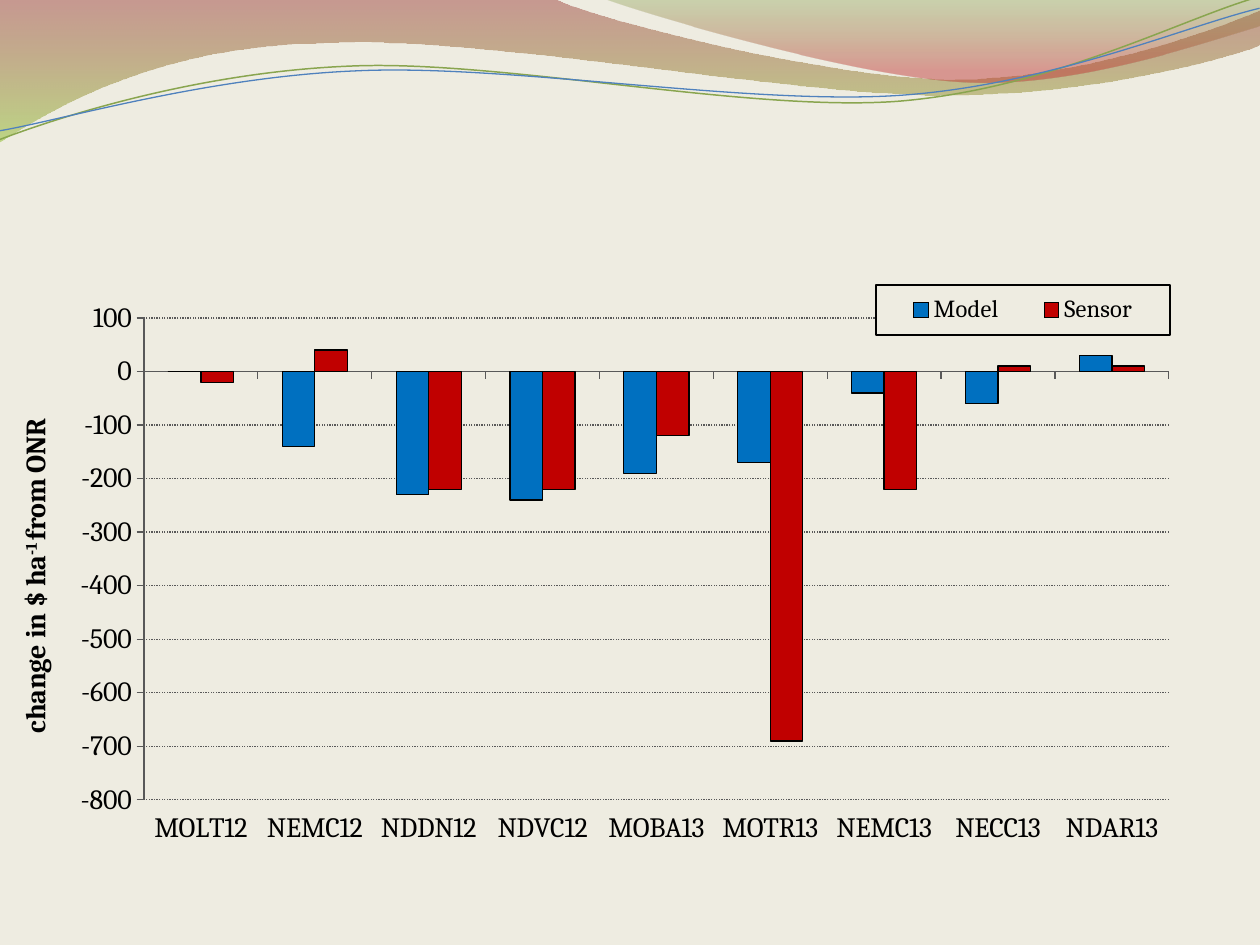
from lxml import etree
from pptx import Presentation
from pptx import util as u
from pptx.chart.data import CategoryChartData
from pptx.dml.color import RGBColor
from pptx.enum import chart as charts, dml
from pptx.oxml import parse_xml
from pptx.oxml.ns import nsdecls, qn

PX = 914400 / 126
FONT = "Cambria"
BLACK = RGBColor(0x00, 0x00, 0x00)
GREY = RGBColor(0x59, 0x59, 0x59)
CREAM = RGBColor(0xEE, 0xEC, 0xE1)
MAROON = RGBColor(0x97, 0x33, 0x30)
LIME = RGBColor(0x95, 0xC2, 0x38)
OLIVE = RGBColor(0x76, 0x95, 0x35)
RED = RGBColor(0xBE, 0x33, 0x30)
GREEN_LINE = RGBColor(0x89, 0xA5, 0x4F)
BLUE_LINE = RGBColor(0x4F, 0x81, 0xBD)
MODEL_BLUE = RGBColor(0x00, 0x70, 0xC0)
SENSOR_RED = RGBColor(0xC0, 0x00, 0x00)

# Each path is a start point, then lines (x, y) and curves (x1, y1, x2, y2, x, y).
WIDE_BAND = [(0, 0), (554, -1), (600, 21, 837, 79, 955, 79),
             (1075, 79, 1207, 33, 1260, 11), (1261, 45),
             (1239, 55, 1096, 96, 940, 95), (784, 95, 481, 35, 324, 43),
             (163, 45, 58, 105, -1, 142)]
RIGHT_BAND = [(604, -1), (643, 14, 859, 78, 969, 82),
              (1079, 87, 1211, 40, 1260, 26), (1260, 0)]
GREEN_WAVE = [(-3, 110), (58, 90, 199, 52, 350, 53),
              (499, 53, 745, 118, 896, 114), (1049, 109, 1184, 45, 1260, 27)]
BLUE_WAVE = [(-2, 101), (57, 94, 207, 57, 357, 58),
             (509, 58, 750, 112, 902, 108), (1052, 104, 1188, 52, 1262, 38)]
WAVE_TILT = -2.7

CHART_BOX = (10, 267, 1187, 605)
SITES = ["MOLT12", "NEMC12", "NDDN12", "NDVC12", "MOBA13",
         "MOTR13", "NEMC13", "NECC13", "NDAR13"]
SERIES = [
    ("Model", MODEL_BLUE, [0, -140, -230, -240, -190, -170, -40, -60, 30]),
    ("Sensor", SENSOR_RED, [-20, 40, -220, -220, -120, -690, -220, 10, 10]),
]


def px(length):
    return u.Emu(round(length * PX))


def place(element, index, left, top, width=None, height=None, inner=False):
    """Give a chart part a manual layout, in px from the corner of the chart."""
    for old in element.findall(qn("c:layout")):
        element.remove(old)
    settings = {"layoutTarget": "inner"} if inner else {}
    settings.update(xMode="edge", yMode="edge",
                    x=left / CHART_BOX[2], y=top / CHART_BOX[3])
    if width:
        settings.update(w=width / CHART_BOX[2], h=height / CHART_BOX[3])
    layout = parse_xml(f"<c:layout {nsdecls('c')}><c:manualLayout/></c:layout>")
    for tag, value in settings.items():
        etree.SubElement(layout[0], qn(f"c:{tag}")).set("val", str(value))
    element.insert(index, layout)


class Deck:
    def __init__(self, width, height):
        self.presentation = Presentation()
        self.presentation.slide_width = px(width)
        self.presentation.slide_height = px(height)
        self.slide = None

    def add_slide(self, color):
        self.slide = self.presentation.slides.add_slide(self.presentation.slide_layouts[6])
        self.slide.background.fill.solid()
        self.slide.background.fill.fore_color.rgb = color

    def outline(self, path, close):
        """Build a freeform, merging each curve's three points into one Bezier."""
        points = [(px(part[i]), px(part[i + 1]))
                  for part in path for i in range(0, len(part), 2)]
        builder = self.slide.shapes.build_freeform(*points[0])
        builder.add_line_segments(points[1:], close=close)
        shape = builder.convert_to_shape()
        shape.shadow.inherit = False
        segments = iter(list(shape._element.spPr.iter(qn("a:lnTo"))))
        for part in path[1:]:
            group = [next(segments) for _ in range(len(part) // 2)]
            if len(group) == 3:
                curve = etree.Element(qn("a:cubicBezTo"))
                group[0].addprevious(curve)
                for segment in group:
                    curve.append(segment[0])
                    segment.getparent().remove(segment)
        return shape

    def band(self, path, stops):
        """Draw a closed shape with a downward gradient of (position, colour, opacity %)."""
        shape = self.outline(path, True)
        shape.line.fill.background()
        shape.fill.gradient()
        shape.fill.gradient_angle = 270
        for stop, (position, color, _) in zip(shape.fill.gradient_stops, stops):
            stop.position = position
            stop.color.rgb = color
        colors = shape._element.spPr.iter(qn("a:srgbClr"))
        for element, (_, _, opacity) in zip(colors, stops):
            etree.SubElement(element, qn("a:alpha")).set("val", str(opacity * 1000))

    def wave(self, path, color, width):
        shape = self.outline(path, False)
        shape.rotation = WAVE_TILT
        shape.fill.background()
        shape.line.color.rgb = color
        shape.line.width = u.Pt(width)

    def font(self, font, size, bold=False):
        font.name = FONT
        font.size = u.Pt(size)
        font.bold = bold
        font.color.rgb = BLACK

    def column_chart(self, box, categories, series):
        data = CategoryChartData()
        data.categories = categories
        for name, _, values in series:
            data.add_series(name, values)
        chart = self.slide.shapes.add_chart(
            charts.XL_CHART_TYPE.COLUMN_CLUSTERED, *map(px, box), data).chart
        chart.has_title = False
        self.font(chart.font, 10)
        plot = chart.plots[0]
        plot.gap_width, plot.overlap, plot.vary_by_categories = 150, 0, False
        for bars, (_, color, _) in zip(plot.series, series):
            bars.invert_if_negative = False
            bars.format.fill.solid()
            bars.format.fill.fore_color.rgb = color
            bars.format.line.color.rgb = BLACK
            bars.format.line.width = u.Pt(0.75)
        for axis in (chart.category_axis, chart.value_axis):
            axis.major_tick_mark = charts.XL_TICK_MARK.OUTSIDE
            axis.minor_tick_mark = charts.XL_TICK_MARK.NONE
            axis.format.line.color.rgb = GREY
            axis.format.line.width = u.Pt(0.75)
            self.font(axis.tick_labels.font, 16)
        chart.category_axis.tick_label_position = charts.XL_TICK_LABEL_POSITION.LOW
        place(chart._chartSpace.chart.plotArea, 0, 134, 51, 1025, 482, inner=True)
        return chart

    def value_scale(self, axis, low, high, step):
        axis.minimum_scale, axis.maximum_scale, axis.major_unit = low, high, step
        axis.has_major_gridlines = True
        line = axis.major_gridlines.format.line
        line.color.rgb = GREY
        line.width = u.Pt(0.75)
        line.dash_style = dml.MSO_LINE.ROUND_DOT

    def axis_title(self, axis, runs, left, top):
        """Write an upright title from (text, is superscript) runs."""
        frame = axis.axis_title.text_frame
        frame._txBody.bodyPr.set("rot", "-5400000")
        frame._txBody.bodyPr.set("vert", "horz")
        for content, raised in runs:
            run = frame.paragraphs[0].add_run()
            run.text = content
            self.font(run.font, 16, bold=True)
            if raised:
                run.font._element.set("baseline", "30000")
        place(axis.axis_title._element, 1, left, top)

    def legend(self, chart, left, top, width, height):
        chart.has_legend = True
        legend = chart.legend
        legend.position = charts.XL_LEGEND_POSITION.RIGHT
        legend.include_in_layout = False
        self.font(legend.font, 14)
        place(legend._element, 1, left, top, width, height)
        legend._element.find(qn("c:overlay")).addnext(parse_xml(
            f"<c:spPr {nsdecls('c', 'a')}>"
            f'<a:solidFill><a:srgbClr val="{CREAM}"/></a:solidFill>'
            f'<a:ln w="9525"><a:solidFill><a:srgbClr val="{BLACK}"/></a:solidFill></a:ln>'
            "</c:spPr>"))


def main():
    deck = Deck(1260, 945)
    deck.add_slide(CREAM)
    deck.band(WIDE_BAND, [(0, MAROON, 45), (1, LIME, 55)])
    deck.band(RIGHT_BAND, [(0, OLIVE, 30), (0.8, RED, 45)])
    deck.wave(GREEN_WAVE, GREEN_LINE, 0.85)
    deck.wave(BLUE_WAVE, BLUE_LINE, 0.75)
    chart = deck.column_chart(CHART_BOX, SITES, SERIES)
    deck.value_scale(chart.value_axis, -800, 100, 100)
    deck.axis_title(chart.value_axis,
                    [(" change in $ ha", False), ("-1 ", True), ("from ONR ", False)],
                    left=4, top=142)
    deck.legend(chart, 866, 18, 294, 50)
    deck.presentation.save("out.pptx")


if __name__ == "__main__":
    main()
